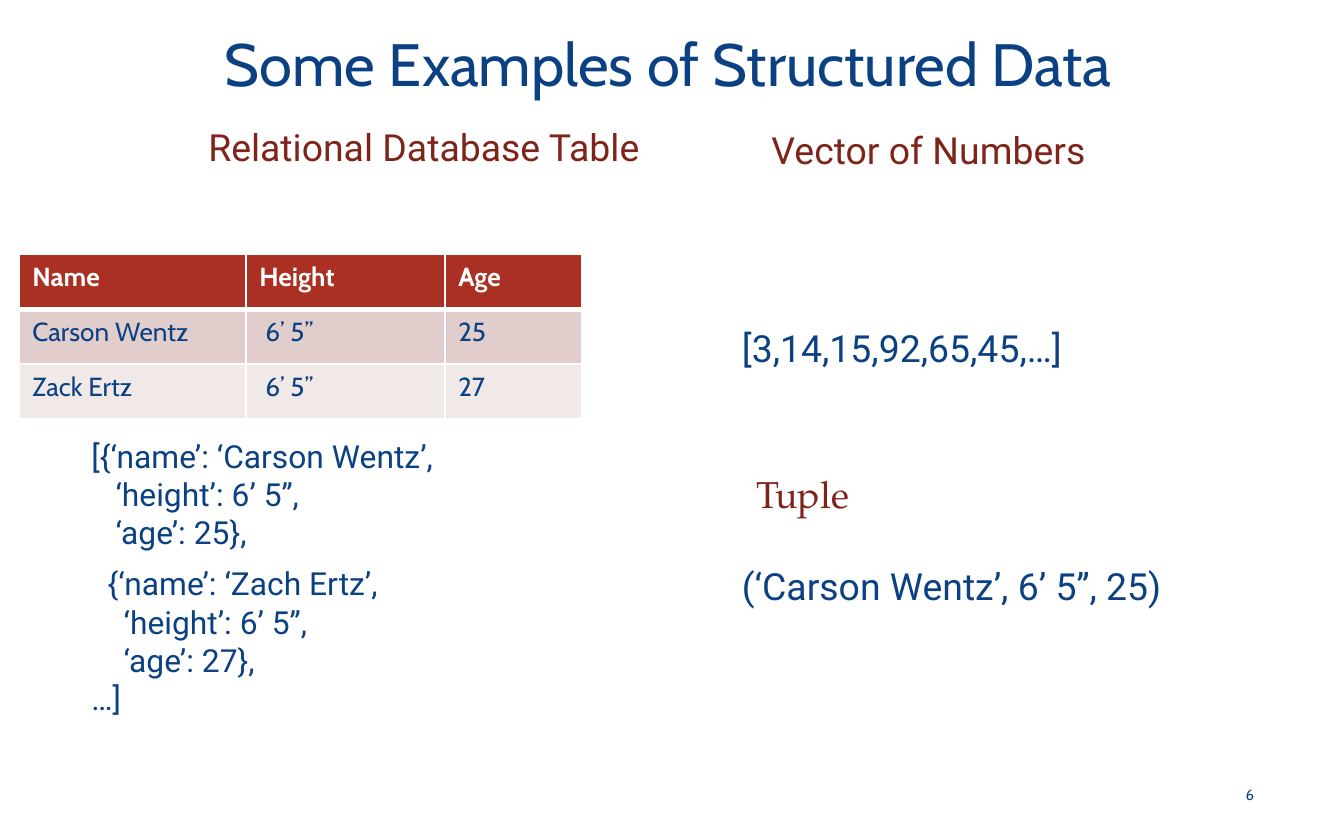
import dataclasses

import lxml.etree
import pptx
import pptx.dml.color
import pptx.enum.text
import pptx.oxml.ns
import pptx.util

Inches = pptx.util.Inches
Pt = pptx.util.Pt
RGBColor = pptx.dml.color.RGBColor
Align = pptx.enum.text.PP_ALIGN
Anchor = pptx.enum.text.MSO_ANCHOR
qn = pptx.oxml.ns.qn

NAVY = RGBColor(0x0B, 0x41, 0x83)
MAROON = RGBColor(0x7F, 0x24, 0x1A)
RED = RGBColor(0xA9, 0x30, 0x23)
ROSE = RGBColor(0xE2, 0xCD, 0xCD)
PALE = RGBColor(0xF1, 0xE8, 0xE8)
WHITE = RGBColor(0xFF, 0xFF, 0xFF)


@dataclasses.dataclass(frozen=True)
class Style:
    font: str
    size: float
    color: RGBColor
    bold: bool = False


@dataclasses.dataclass(frozen=True)
class Line:
    text: str
    before: float = 0
    after: float = 0
    indent: float = 0  # inches


@dataclasses.dataclass(frozen=True)
class Block:
    box: tuple[float, float, float, float]
    lines: tuple[Line, ...]
    style: Style
    anchor: Anchor = Anchor.MIDDLE
    align: Align = Align.LEFT


TITLE = Style("Cabin", 32, NAVY)
HEADING = Style("Roboto", 20, MAROON)
TUPLE_HEADING = Style("TeX Gyre Pagella", 20, MAROON)
CODE = Style("Roboto", 17, NAVY)
VALUE = Style("Roboto", 20, NAVY)
NUMBER = Style("Cabin", 8, NAVY)
TABLE_HEAD = Style("Cabin", 14, WHITE, True)
TABLE_BODY = Style("Cabin", 14, NAVY)

AFTER = 3.8
SPACE = 0.06  # one character of code indentation


def add_run(p, text: str, style: Style) -> None:
    r = p.add_run()
    r.text = text
    r.font.name = style.font
    r.font.size = Pt(style.size)
    r.font.bold = style.bold
    r.font.color.rgb = style.color


def write_block(sp, block: Block) -> None:
    sp.left, sp.top, sp.width, sp.height = map(Inches, block.box)
    tf = sp.text_frame
    tf.word_wrap = True
    tf.auto_size = pptx.enum.text.MSO_AUTO_SIZE.NONE
    tf.vertical_anchor = block.anchor
    for i, line in enumerate(block.lines):
        p = tf.add_paragraph() if i else tf.paragraphs[0]
        p.alignment = block.align
        p.space_before = Pt(line.before)
        p.space_after = Pt(line.after)
        pPr = p._p.get_or_add_pPr()
        pPr.set("marL", str(Inches(line.indent)))
        pPr.set("indent", "0")
        lxml.etree.SubElement(pPr, qn("a:buNone"))
        add_run(p, line.text, block.style)


def set_borders(cell, top: float, bottom: float) -> None:
    tcPr = cell._tc.get_or_add_tcPr()
    sides = (("L", 1), ("R", 1), ("T", top), ("B", bottom))
    for i, (side, width) in enumerate(sides):
        ln = lxml.etree.Element(qn(f"a:ln{side}"), w=str(Pt(width)))
        fill = lxml.etree.SubElement(ln, qn("a:solidFill"))
        lxml.etree.SubElement(fill, qn("a:srgbClr"), val=str(WHITE))
        tcPr.insert(i, ln)


def add_player_table(slide, rows: list[tuple[str, ...]]) -> None:
    widths = (1.69, 1.48, 1.02)
    row_height = 0.41
    table = slide.shapes.add_table(
        len(rows), len(widths), Inches(0.14), Inches(1.89),
        Inches(sum(widths)), Inches(row_height * len(rows))).table
    for column, width in zip(table.columns, widths):
        column.width = Inches(width)
    for i, (values, color) in enumerate(zip(rows, (RED, ROSE, PALE))):
        table.rows[i].height = Inches(row_height)
        for j, value in enumerate(values):
            cell = table.cell(i, j)
            cell.fill.solid()
            cell.fill.fore_color.rgb = color
            set_borders(cell, top=3 if i == 1 else 1, bottom=1 if i else 3)
            add_run(cell.text_frame.paragraphs[0], value,
                    TABLE_BODY if i else TABLE_HEAD)


def heading(text: str, box: tuple[float, float, float, float],
            style: Style = HEADING) -> Block:
    return Block(box, (Line(text, 4, AFTER),), style, Anchor.BOTTOM)


def main() -> None:
    prs = pptx.Presentation()
    prs.slide_width, prs.slide_height = Inches(10), Inches(6.25)
    s = prs.slides.add_slide(prs.slide_layouts.get_by_name("Comparison"))

    # Title, headings and lists, by placeholder index
    blocks = {
        0: Block((0.51, 0.14, 8.93, 0.65),
                 (Line("Some Examples of Structured Data"),),
                 TITLE, align=Align.CENTER),
        1: heading("Relational Database Table", (1.45, 0.79, 3.78, 0.52)),
        2: Block((0.58, 3.36, 4.02, 1.86), (
            Line("[{‘name’: ‘Carson Wentz’,", before=3.4),
            Line("‘height’: 6’ 5’’,", indent=3 * SPACE),
            Line("‘age’: 25},", after=AFTER, indent=3 * SPACE),
            Line("{‘name’: ‘Zach Ertz’,", before=3.4, indent=2 * SPACE),
            Line("‘height’: 6’ 5’’,", indent=4 * SPACE),
            Line("‘age’: 27},", indent=4 * SPACE),
            Line("…]", after=AFTER)), CODE),
        3: heading("Vector of Numbers", (5.64, 0.8, 3.79, 0.53)),
        4: Block((5.42, 1.41, 4.01, 4.13), (
            Line("[3,14,15,92,65,45,…]", 4, AFTER),
            Line("(‘Carson Wentz’, 6’ 5’’, 25)", 99.7, AFTER)), VALUE),
    }
    for sp in s.placeholders:
        write_block(sp, blocks[sp.placeholder_format.idx])

    # Slide number and tuple heading
    for block in (
        Block((8.98, 5.75, 0.45, 0.33), (Line("6"),), NUMBER,
              align=Align.RIGHT),
        heading("Tuple", (5.53, 3.36, 3.79, 0.53), TUPLE_HEADING),
    ):
        write_block(s.shapes.add_textbox(0, 0, 0, 0), block)

    # Relational table
    add_player_table(s, [
        ("Name", "Height", "Age"),
        ("Carson Wentz", " 6’ 5’’", "25"),
        ("Zack Ertz", " 6’ 5’’", "27"),
    ])

    prs.save("out.pptx")


if __name__ == "__main__":
    main()
